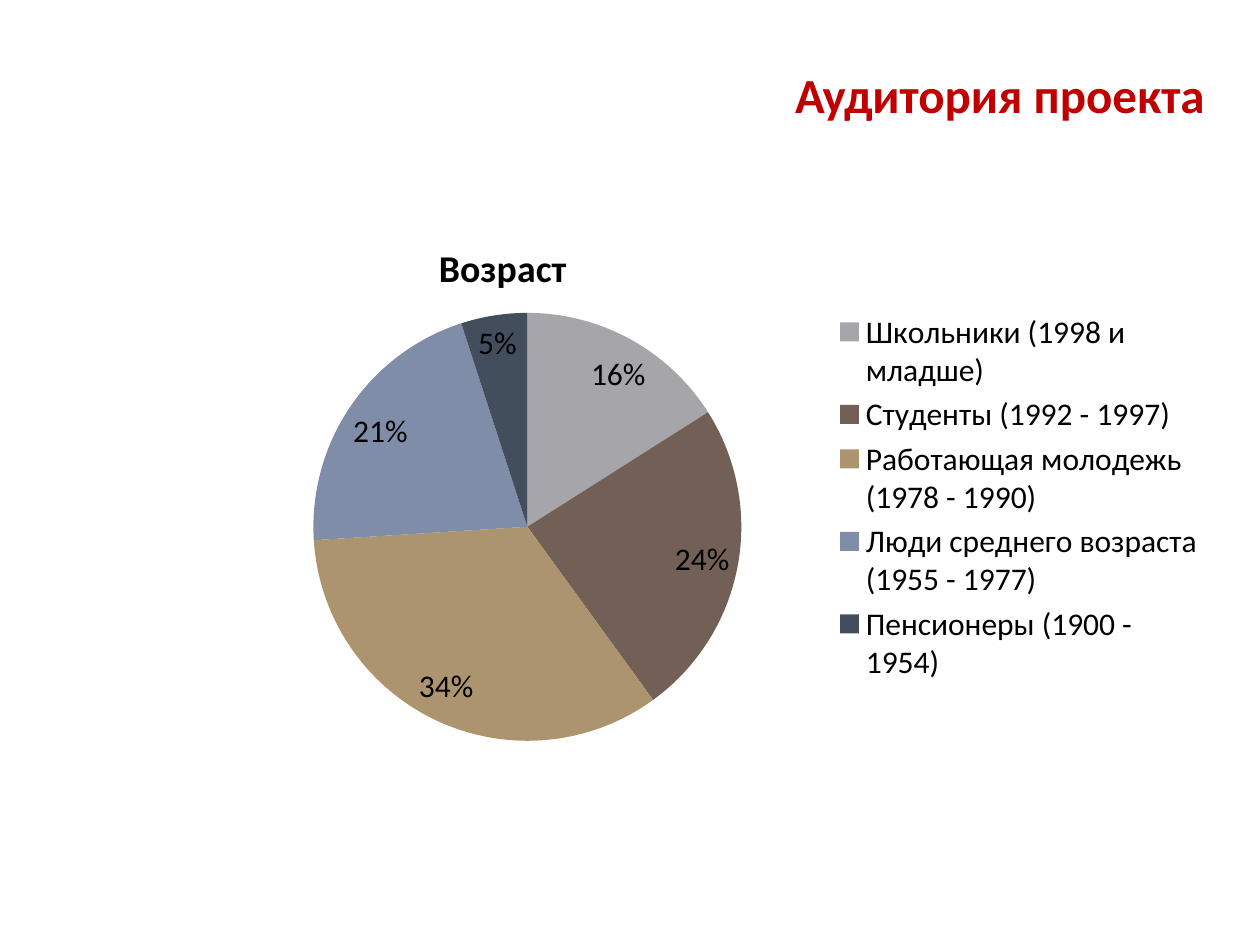
from lxml import etree
from pptx import Presentation
from pptx.chart.data import CategoryChartData
from pptx.dml.color import RGBColor
from pptx.enum.chart import XL_CHART_TYPE, XL_LABEL_POSITION, XL_LEGEND_POSITION
from pptx.enum.text import MSO_ANCHOR, PP_ALIGN
from pptx.oxml.ns import qn
from pptx.util import Pt

PIE = XL_CHART_TYPE.PIE
BEST = XL_LABEL_POSITION.BEST_FIT
SIDE = XL_LEGEND_POSITION.RIGHT
RIGHT = PP_ALIGN.RIGHT
MIDDLE = MSO_ANCHOR.MIDDLE

PX = 914400 // 126
FACE = "Calibri"
AGES = [
    ("Школьники (1998 и младше)", 0.16, "A5A5AA"),
    ("Студенты (1992 - 1997)", 0.24, "726056"),
    ("Работающая молодежь (1978 - 1990)", 0.34, "AC956E"),
    ("Люди среднего возраста (1955 - 1977)", 0.21, "808DA9"),
    ("Пенсионеры (1900 - 1954)", 0.05, "424E5B"),
]


def emu(*box):
    return [n * PX for n in box]


def color(code):
    return RGBColor.from_string(code)


def style(font, size, tint="000000", bold=False):
    font.name, font.size, font.bold = FACE, Pt(size), bold
    font.color.rgb = color(tint)


def write(frame, text, align=None, lead=None, **look):
    frame.text = text
    para = frame.paragraphs[0]
    para.alignment, para.line_spacing = align, lead
    style(para.runs[0].font, **look)


def place(part, after, box, size, target=None):
    """Fix a chart part at px (x, y, w, h) within a frame of the given size."""
    for old in part.findall(qn("c:layout")):
        part.remove(old)
    layout = etree.Element(qn("c:layout"))
    manual = etree.SubElement(layout, qn("c:manualLayout"))
    if target:
        etree.SubElement(manual, qn("c:layoutTarget"), val=target)
    for tag in ("xMode", "yMode"):
        etree.SubElement(manual, qn("c:" + tag), val="edge")
    for tag, num, full in zip("xywh", box, size * 2):
        etree.SubElement(manual, qn("c:" + tag), val=f"{num / full:.4f}")
    if after is None:
        part.insert(0, layout)
    else:
        after.addnext(layout)


def add_title(slide, x, y, w, h):
    title = slide.shapes.title
    title.left, title.top, title.width, title.height = emu(x, y, w, h)
    frame = title.text_frame
    frame.word_wrap, frame.vertical_anchor = True, MIDDLE
    write(frame, "Аудитория проекта", align=RIGHT, lead=0.8,
          size=28, tint="C00000", bold=True)


def add_pie(slide, x, y, w, h):
    names, shares, tints = zip(*AGES)
    data = CategoryChartData(number_format="0%")
    data.categories = names
    data.add_series("Series 1", shares)
    chart = slide.shapes.add_chart(PIE, *emu(x, y, w, h), data).chart
    style(chart.font, 18)
    size = (w, h)

    # Heading
    chart.has_title = True
    head = chart.chart_title
    write(head.text_frame, "Возраст", size=21.6, bold=True)
    head.include_in_layout = False
    node = head._element
    place(node, node.find(qn("c:tx")), (348, 20), size)

    # Legend
    chart.has_legend = True
    key = chart.legend
    key.position, key.include_in_layout = SIDE, True
    style(key.font, 18)

    # Slices and labels
    plot = chart.plots[0]
    plot.vary_by_categories = True
    for i, tint in enumerate(tints):
        fill = plot.series[0].points[i].format.fill
        fill.solid()
        fill.fore_color.rgb = color(tint)
    plot.has_data_labels = True
    tags = plot.data_labels
    tags.show_value, tags.show_percentage = True, False
    tags.number_format, tags.number_format_is_linked = "0%", False
    tags.position = BEST
    style(tags.font, 18)
    area = chart._chartSpace.chart.plotArea
    place(area, None, (21, 99, 845, 428), size, target="inner")


def main():
    deck = Presentation()
    deck.slide_width, deck.slide_height = emu(1260, 945)
    slide = deck.slides.add_slide(deck.slide_layouts[5])
    add_title(slide, 512, 46, 705, 107)
    add_pie(slide, 84, 214, 1134, 566)
    deck.save("out.pptx")


if __name__ == "__main__":
    main()
